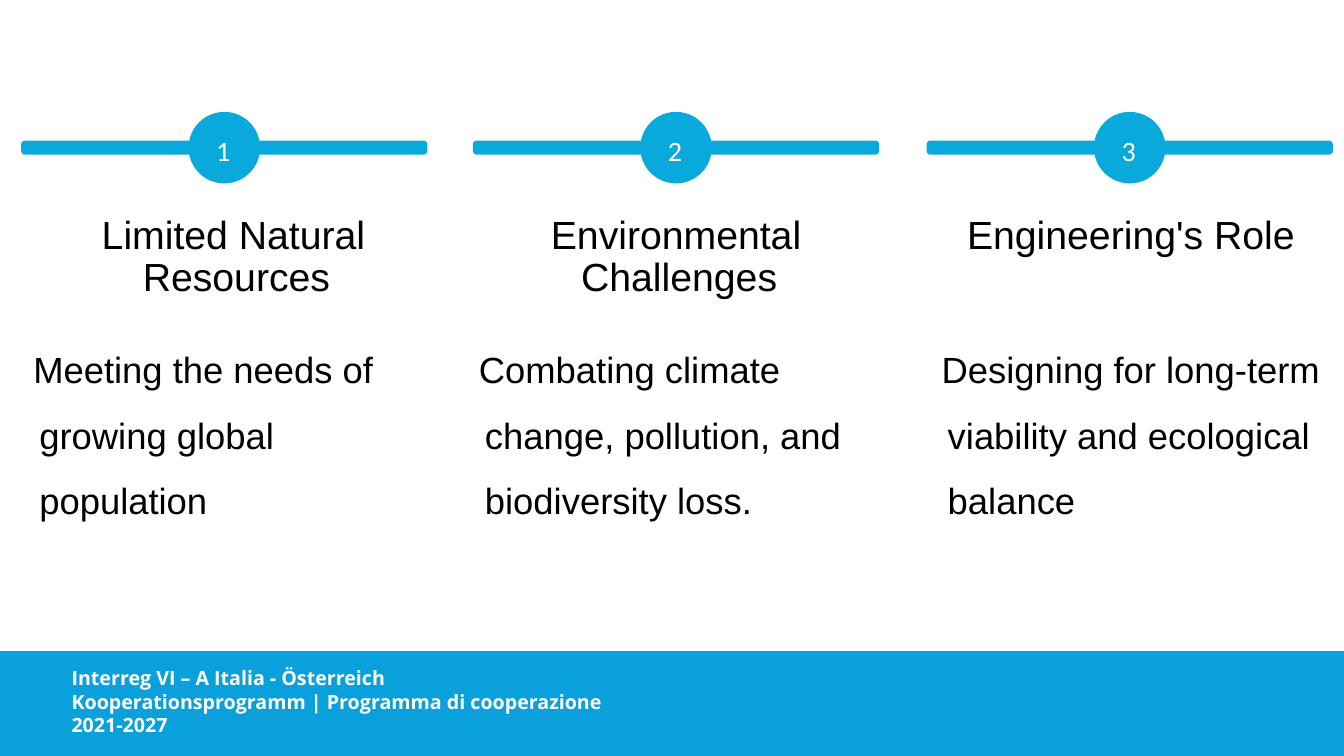
from dataclasses import dataclass

from pptx import Presentation
from pptx.dml.color import RGBColor
from pptx.enum.shapes import MSO_SHAPE
from pptx.enum.text import PP_ALIGN
from pptx.util import Inches, Pt

RECTANGLE = MSO_SHAPE.RECTANGLE
ROUNDED = MSO_SHAPE.ROUNDED_RECTANGLE
LEFT, CENTER = PP_ALIGN.LEFT, PP_ALIGN.CENTER

# Content: heading, body, and left edges of the bar, heading and body
TOPICS = [
    ("Limited Natural Resources",
     "Meeting the needs of growing global population",
     (0.21, 0.14, 0.14)),
    ("Environmental Challenges",
     "Combating climate change, pollution, and biodiversity loss.",
     (4.69, 4.53, 4.56)),
    ("Engineering's Role",
     "Designing for long-term viability and ecological balance",
     (9.19, 9.04, 9.15)),
]
FOOTER = [
    "Interreg VI – A Italia - Österreich",
    "Kooperationsprogramm | Programma di cooperazione",
    "2021-2027",
]


@dataclass(frozen=True)
class Theme:
    footer_fill: str = "0AA0DC"
    accent: str = "0AA9DC"
    light: str = "FFFFFF"
    dark: str = "000000"
    text_font: str = "Arial"
    number_font: str = "Calibri"
    footer_font: str = "Open Sans"
    heading_size: float = 28
    body_size: float = 26
    number_size: float = 20
    footer_size: float = 14


THEME = Theme()

# Layout in inches
WIDTH, HEIGHT = 13.33, 7.5
FOOTER_TOP = 6.46
BAR_WIDTH, BAR_HEIGHT = 4.03, 0.14
DISC, DISC_TOP = 0.71, 1.11
BAR_TOP = DISC_TOP + (DISC - BAR_HEIGHT) / 2
NUMBER_WIDTH, NUMBER_HEIGHT, NUMBER_TOP = 0.24, 0.35, 1.21
TEXT_WIDTH = 4.16
HEADING_TOP, HEADING_HEIGHT = 2.14, 0.98
BODY_TOP, BODY_HEIGHT = 3.23, 2.61
INDENT, FIRST_LINE = 0.25, -0.06

deck = Presentation()
deck.slide_width, deck.slide_height = Inches(WIDTH), Inches(HEIGHT)
page = deck.slides.add_slide(deck.slide_layouts[6])


def add_block(kind, left, top, width, height, color, rounding=None):
    block = page.shapes.add_shape(
        kind, Inches(left), Inches(top), Inches(width), Inches(height))
    block.shadow.inherit = False
    block.fill.solid()
    block.fill.fore_color.rgb = RGBColor.from_string(color)
    block.line.fill.background()
    if rounding is not None:
        block.adjustments[0] = rounding


def add_text(lines, left, top, width, height, font, size, color, bold=False,
             align=LEFT, spacing=None, hanging=False, wrap=True):
    box = page.shapes.add_textbox(
        Inches(left), Inches(top), Inches(width), Inches(height))
    frame = box.text_frame
    frame.word_wrap = wrap
    frame.margin_left = frame.margin_right = 0
    frame.margin_top = frame.margin_bottom = 0
    frame.text = "\n".join(lines)
    for para in frame.paragraphs:
        if hanging:
            properties = para._p.get_or_add_pPr()
            properties.set("marL", str(Inches(INDENT)))
            properties.set("indent", str(Inches(FIRST_LINE)))
        para.alignment = align
        para.line_spacing = spacing
        para.font.name = font
        para.font.size = Pt(size)
        para.font.bold = bold
        para.font.color.rgb = RGBColor.from_string(color)


# Footer band
add_block(RECTANGLE, 0, FOOTER_TOP, WIDTH, HEIGHT - FOOTER_TOP,
          THEME.footer_fill)
add_text(FOOTER, 0.71, 6.61, 5.78, 0.71, THEME.footer_font,
         THEME.footer_size, THEME.light, bold=True)

# Numbered columns
for number, (heading, body, lefts) in enumerate(TOPICS, start=1):
    bar_left, heading_left, body_left = lefts
    middle = bar_left + BAR_WIDTH / 2
    add_block(ROUNDED, middle - DISC / 2, DISC_TOP, DISC, DISC,
              THEME.accent, 0.5)
    add_block(ROUNDED, bar_left, BAR_TOP, BAR_WIDTH, BAR_HEIGHT,
              THEME.accent, 0.27)
    add_text([str(number)], middle - 0.08, NUMBER_TOP, NUMBER_WIDTH,
             NUMBER_HEIGHT, THEME.number_font, THEME.number_size,
             THEME.light, spacing=Pt(32.5), wrap=False)
    add_text([heading], heading_left, HEADING_TOP, TEXT_WIDTH, HEADING_HEIGHT,
             THEME.text_font, THEME.heading_size, THEME.dark,
             align=CENTER, spacing=0.9, hanging=True)
    add_text([body], body_left, BODY_TOP, TEXT_WIDTH, BODY_HEIGHT,
             THEME.text_font, THEME.body_size, THEME.dark,
             spacing=1.5, hanging=True)

deck.save("out.pptx")
